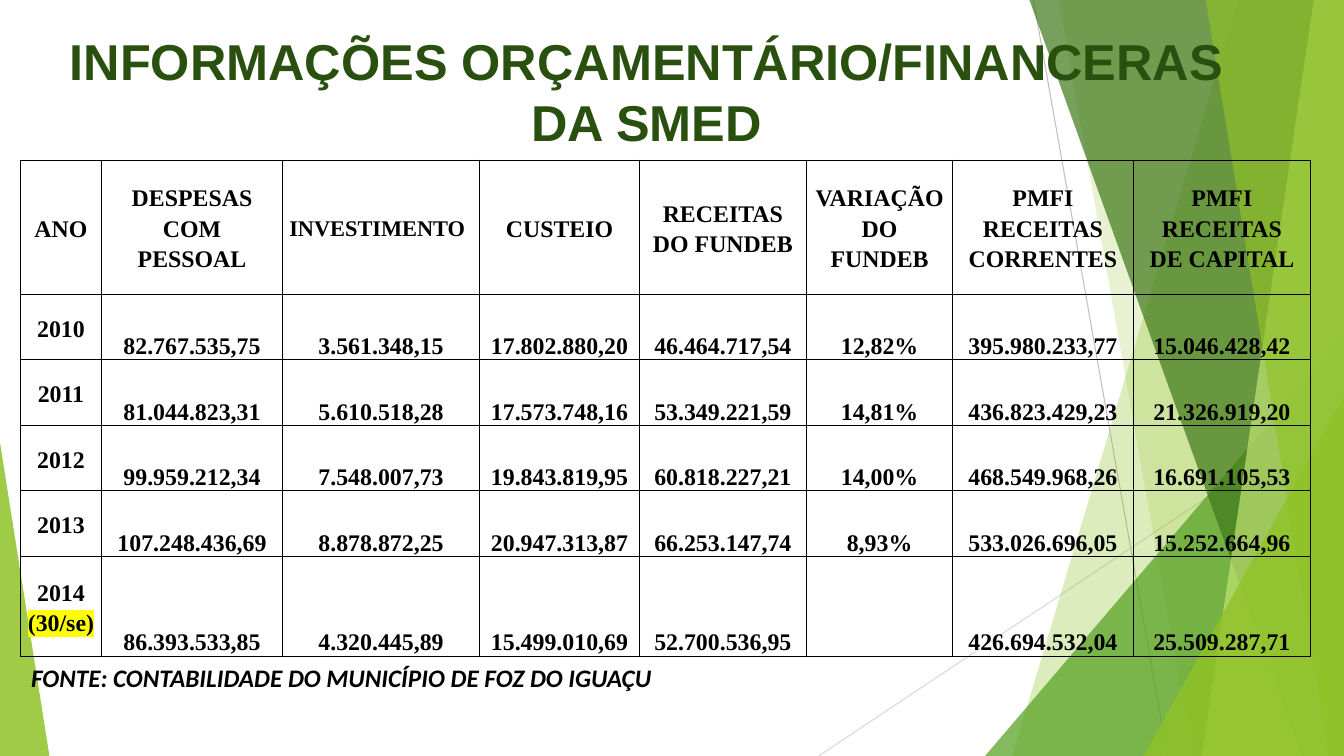
from collections import namedtuple
from dataclasses import dataclass

from lxml import etree
from pptx import Presentation
from pptx.dml.color import RGBColor
from pptx.enum.shapes import MSO_CONNECTOR, MSO_SHAPE
from pptx.enum.text import MSO_ANCHOR, PP_ALIGN
from pptx.oxml.ns import qn
from pptx.util import Inches, Pt

STRAIGHT = MSO_CONNECTOR.STRAIGHT
TRIANGLE = MSO_SHAPE.ISOSCELES_TRIANGLE
TOP, MIDDLE, BOTTOM = MSO_ANCHOR.TOP, MSO_ANCHOR.MIDDLE, MSO_ANCHOR.BOTTOM
LEFT, CENTER = PP_ALIGN.LEFT, PP_ALIGN.CENTER

Box = namedtuple("Box", "left top width height")


@dataclass(frozen=True)
class Theme:
    lime: str = "90C226"
    green: str = "54A021"
    forest: str = "3F7819"
    pale: str = "C0E474"
    title: str = "2A5010"
    ink: str = "000000"
    marker: str = "FFFF00"
    ray_dark: str = "BFBFBF"
    ray_light: str = "D9D9D9"
    title_font: str = "Arial"
    table_font: str = "Times New Roman"
    source_font: str = "Calibri"
    title_size: int = 36
    table_size: int = 17
    narrow_size: int = 16
    source_size: int = 18


THEME = Theme()

TITLE = "INFORMAÇÕES ORÇAMENTÁRIO/FINANCERAS\vDA SMED"
SOURCE = "FONTE: CONTABILIDADE DO MUNICÍPIO DE FOZ DO IGUAÇU"
INVESTMENT = "INVESTIMENTO"
PARTIAL_YEAR = "(30/se)"
COLUMN_WIDTHS = [0.81, 1.79, 1.96, 1.58, 1.66, 1.45, 1.79, 1.76]
ROW_HEIGHTS = [1.33] + [0.65] * 4 + [0.99]
ROWS = [
    ["ANO", "DESPESAS COM PESSOAL", INVESTMENT, "CUSTEIO", "RECEITAS DO FUNDEB",
     "VARIAÇÃO DO FUNDEB", "PMFI\nRECEITAS\nCORRENTES", "PMFI\nRECEITAS\nDE CAPITAL"],
    ["2010", "82.767.535,75", "3.561.348,15", "17.802.880,20", "46.464.717,54",
     "12,82%", "395.980.233,77", "15.046.428,42"],
    ["2011", "81.044.823,31", "5.610.518,28", "17.573.748,16", "53.349.221,59",
     "14,81%", "436.823.429,23", "21.326.919,20"],
    ["2012", "99.959.212,34", "7.548.007,73", "19.843.819,95", "60.818.227,21",
     "14,00%", "468.549.968,26", "16.691.105,53"],
    ["2013", "107.248.436,69", "8.878.872,25", "20.947.313,87", "66.253.147,74",
     "8,93%", "533.026.696,05", "15.252.664,96"],
    ["2014\n" + PARTIAL_YEAR, "86.393.533,85", "4.320.445,89", "15.499.010,69",
     "52.700.536,95", "", "426.694.532,04", "25.509.287,71"],
]


def style_font(font, name, size, color):
    font.name, font.size, font.bold = name, Pt(size), True
    font.color.rgb = RGBColor.from_string(color)


def paint(shape, color, opacity):
    """Fill a shape with a see-through colour and no outline."""
    shape.shadow.inherit = False
    shape.line.fill.background()
    shape.fill.solid()
    shape.fill.fore_color.rgb = RGBColor.from_string(color)
    tint = shape.fill._xPr.find(qn("a:solidFill"))[0]
    etree.SubElement(tint, qn("a:alpha"), val=str(opacity * 1000))


def add_ray(page, start, end, color):
    ray = page.shapes.add_connector(STRAIGHT, *map(Inches, start + end))
    ray.line.color.rgb = RGBColor.from_string(color)
    ray.line.width = Pt(0.75)
    etree.SubElement(ray._element.spPr, qn("a:effectLst"))


def add_band(page, box, top_inset, bottom_inset, color, opacity):
    """Full-height band along the right edge; insets are its upper and lower widths."""
    right, bottom = box.left + box.width, box.top + box.height
    corners = [(right - top_inset, box.top), (right, box.top),
               (right, bottom), (right - bottom_inset, bottom)]
    points = [(Inches(x), Inches(y)) for x, y in corners]
    outline = page.shapes.build_freeform(*points[0])
    outline.add_line_segments(points[1:], close=True)
    paint(outline.convert_to_shape(), color, opacity)


def add_corner(page, box, width, height, apex, color, opacity):
    """Right triangle in a lower corner: apex 0 stands left, apex 1 stands right."""
    left = box.left + apex * (box.width - width)
    top = box.top + box.height - height
    corner = page.shapes.add_shape(TRIANGLE, *map(Inches, (left, top, width, height)))
    corner.adjustments[0] = apex
    paint(corner, color, opacity)


def draw_backdrop(page, box):
    right, bottom = box.left + box.width, box.top + box.height
    add_ray(page, (right - 3.08, box.top), (right - 1.75, bottom), THEME.ray_dark)
    add_ray(page, (right, box.top + 4.03), (right - 5.21, bottom), THEME.ray_light)
    # Facets, back to front
    add_band(page, box, 1.05, 3.29, THEME.lime, 30)
    add_band(page, box, 2.83, 1.5, THEME.lime, 20)
    add_corner(page, box, 3.56, 4.17, 1, THEME.green, 72)
    add_band(page, box, 3.12, 0.42, THEME.forest, 70)
    add_band(page, box, 0.3, 1.41, THEME.pale, 70)
    add_band(page, box, 1.37, 0.15, THEME.lime, 65)
    add_corner(page, box, 1.99, 3.57, 1, THEME.lime, 80)
    add_corner(page, box, 0.49, 3.11, 0, THEME.lime, 85)


def add_label(page, box, text, name, size, color, align):
    frame = page.shapes.add_textbox(*map(Inches, box)).text_frame
    frame.word_wrap = True
    frame.vertical_anchor = TOP
    para = frame.paragraphs[0]
    para.text = text
    para.alignment = align
    for span in para.runs:
        style_font(span.font, name, size, color)
    return frame


def draw_title(page, box):
    frame = add_label(page, box, TITLE, THEME.title_font, THEME.title_size,
                      THEME.title, CENTER)
    frame.margin_top = Inches(0.1)


def draw_source(page, box):
    frame = add_label(page, box, SOURCE, THEME.source_font, THEME.source_size,
                      THEME.ink, LEFT)
    frame.paragraphs[0].runs[0].font.italic = True


def add_borders(cell):
    properties = cell._tc.get_or_add_tcPr()
    for side in ("a:lnL", "a:lnR", "a:lnT", "a:lnB"):
        edge = etree.SubElement(properties, qn(side), w=str(Pt(1)))
        fill = etree.SubElement(edge, qn("a:solidFill"))
        etree.SubElement(fill, qn("a:srgbClr"), val=THEME.ink)


def highlight(span):
    marker = etree.Element(qn("a:highlight"))
    etree.SubElement(marker, qn("a:srgbClr"), val=THEME.marker)
    span._r.get_or_add_rPr().find(qn("a:solidFill")).addnext(marker)


def fill_cell(cell, text, anchor):
    cell.margin_left = cell.margin_right = Inches(0.07)
    cell.margin_top = cell.margin_bottom = 0
    cell.vertical_anchor = anchor
    add_borders(cell)
    cell.fill.background()
    cell.text_frame.text = text
    narrow = text == INVESTMENT
    for para in cell.text_frame.paragraphs:
        para.alignment = LEFT if narrow else CENTER
        para.line_spacing = 1.15
        for span in para.runs:
            size = THEME.narrow_size if narrow else THEME.table_size
            style_font(span.font, THEME.table_font, size, THEME.ink)
            if span.text == PARTIAL_YEAR:
                highlight(span)


def draw_budget_table(page, box):
    frame = page.shapes.add_table(len(ROWS), len(COLUMN_WIDTHS), *map(Inches, box))
    table = frame.table
    table.first_row = table.horz_banding = False
    for column, width in zip(table.columns, COLUMN_WIDTHS):
        column.width = Inches(width)
    for row, height in zip(table.rows, ROW_HEIGHTS):
        row.height = Inches(height)
    for row_index, values in enumerate(ROWS):
        for column_index, text in enumerate(values):
            is_heading = row_index == 0 or column_index == 0
            fill_cell(table.cell(row_index, column_index), text,
                      MIDDLE if is_heading else BOTTOM)


def main():
    deck = Presentation()
    deck.slide_width, deck.slide_height = Inches(13.33), Inches(7.5)
    page = deck.slides.add_slide(deck.slide_layouts[6])
    draw_backdrop(page, Box(0, 0, 13.33, 7.5))
    draw_title(page, Box(0.42, 0.2, 11.99, 1.44))
    draw_budget_table(page, Box(0.2, 1.59, sum(COLUMN_WIDTHS), sum(ROW_HEIGHTS)))
    draw_source(page, Box(0.21, 6.52, 6.67, 0.71))
    deck.save("out.pptx")


if __name__ == "__main__":
    main()
